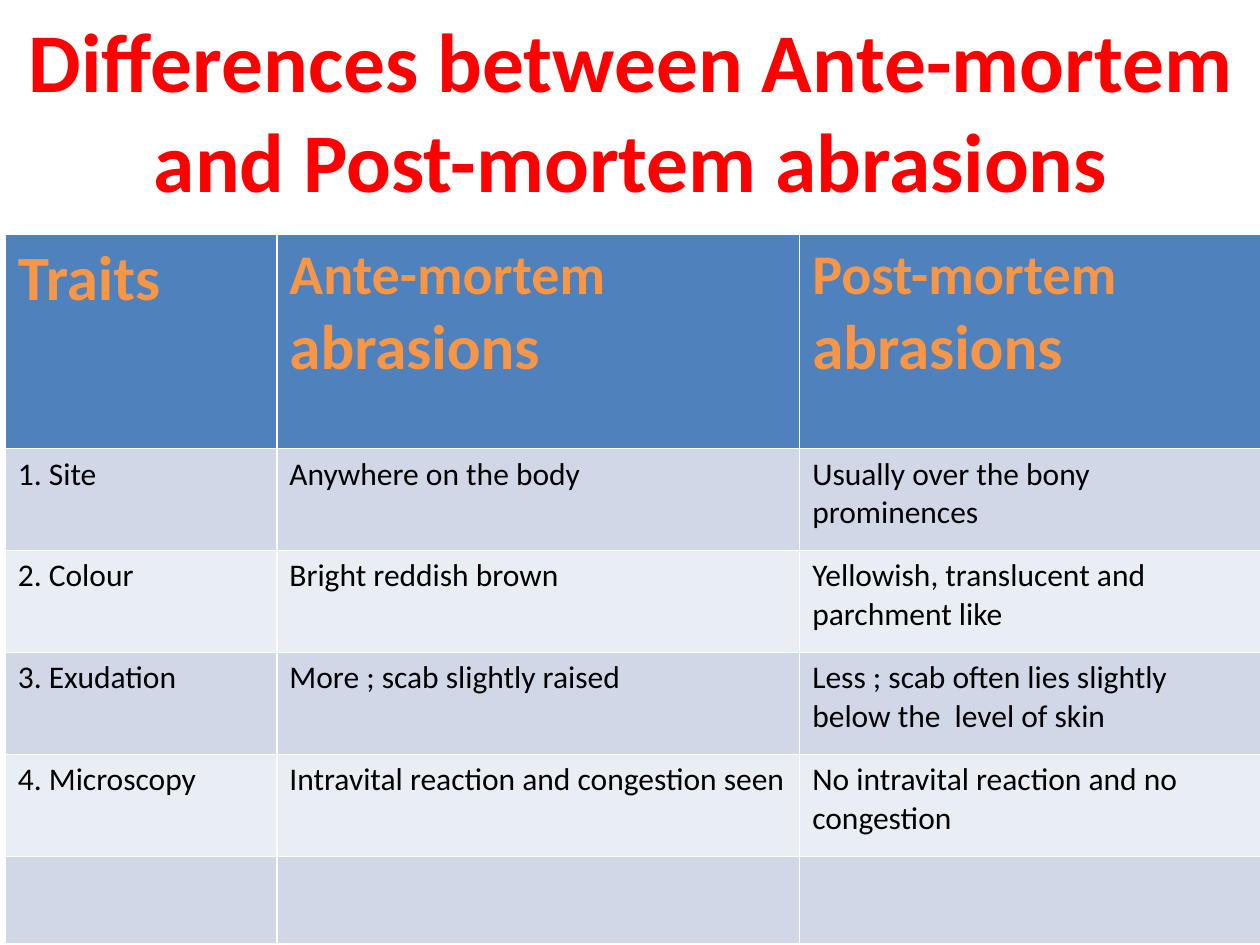
from pptx import Presentation
from pptx.dml.color import RGBColor
from pptx.enum.text import MSO_ANCHOR, MSO_AUTO_SIZE, PP_ALIGN
from pptx.util import Pt

HEADERS = [
    [("Traits", 36)],
    [("Ante-mortem ", 32), ("abrasions", 36)],
    [("Post-mortem ", 32), ("abrasions", 36)],
]
TRAITS = [
    ("1. Site", "Anywhere on the body", "Usually over the bony prominences"),
    ("2. Colour", "Bright reddish brown", "Yellowish, translucent and parchment like"),
    ("3. Exudation", "More ; scab slightly raised",
     "Less ; scab often lies slightly below the  level of skin"),
    ("4. Microscopy", "Intravital reaction and congestion seen",
     "No intravital reaction and no congestion"),
    ("", "", ""),
]
COL_WIDTHS = [155.2, 298.8, 263.5]
ROW_HEIGHTS = [122.4] + [58.3] * 4 + [49.7]
BANDS = ["D0D8E8", "E9EDF4"]


def rgb(value):
    return RGBColor.from_string(value)


def format_run(r, size, color, bold=False):
    r.font.name = "Calibri"
    r.font.size = Pt(size)
    r.font.bold = bold
    r.font.color.rgb = rgb(color)


def fill_cell(cell, color):
    cell.fill.solid()
    cell.fill.fore_color.rgb = rgb(color)


def add_title(s, text):
    sp = s.shapes.title
    sp.left, sp.top, sp.width, sp.height = Pt(0.7), Pt(9.4), Pt(720), Pt(90.7)
    tf = sp.text_frame
    tf.text = text
    tf.word_wrap = True
    tf.auto_size = MSO_AUTO_SIZE.NONE
    tf.vertical_anchor = MSO_ANCHOR.MIDDLE
    tf.margin_top, tf.margin_bottom = Pt(15), Pt(0)
    p = tf.paragraphs[0]
    p.alignment = PP_ALIGN.CENTER
    format_run(p.runs[0], 47.7, "FF0000", True)


def add_header(table):
    for col, parts in enumerate(HEADERS):
        cell = table.cell(0, col)
        fill_cell(cell, "4F81BD")
        p = cell.text_frame.paragraphs[0]
        for text, size in parts:
            r = p.add_run()
            r.text = text
            format_run(r, size, "F79646", True)


def add_traits(table):
    for row, texts in enumerate(TRAITS, 1):
        for col, text in enumerate(texts):
            cell = table.cell(row, col)
            fill_cell(cell, BANDS[(row - 1) % 2])
            if text:
                cell.text = text
                format_run(cell.text_frame.paragraphs[0].runs[0], 18, "000000")


def add_comparison(s):
    table = s.shapes.add_table(
        len(ROW_HEIGHTS), len(COL_WIDTHS), Pt(3), Pt(134),
        Pt(sum(COL_WIDTHS)), Pt(sum(ROW_HEIGHTS))).table
    for column, width in zip(table.columns, COL_WIDTHS):
        column.width = Pt(width)
    for row, height in zip(table.rows, ROW_HEIGHTS):
        row.height = Pt(height)
    add_header(table)
    add_traits(table)


def main():
    prs = Presentation()
    prs.slide_width, prs.slide_height = Pt(720), Pt(540)
    s = prs.slides.add_slide(prs.slide_layouts[5])
    add_title(s, "Differences between Ante-mortem and Post-mortem abrasions")
    add_comparison(s)
    prs.save("out.pptx")


if __name__ == "__main__":
    main()
